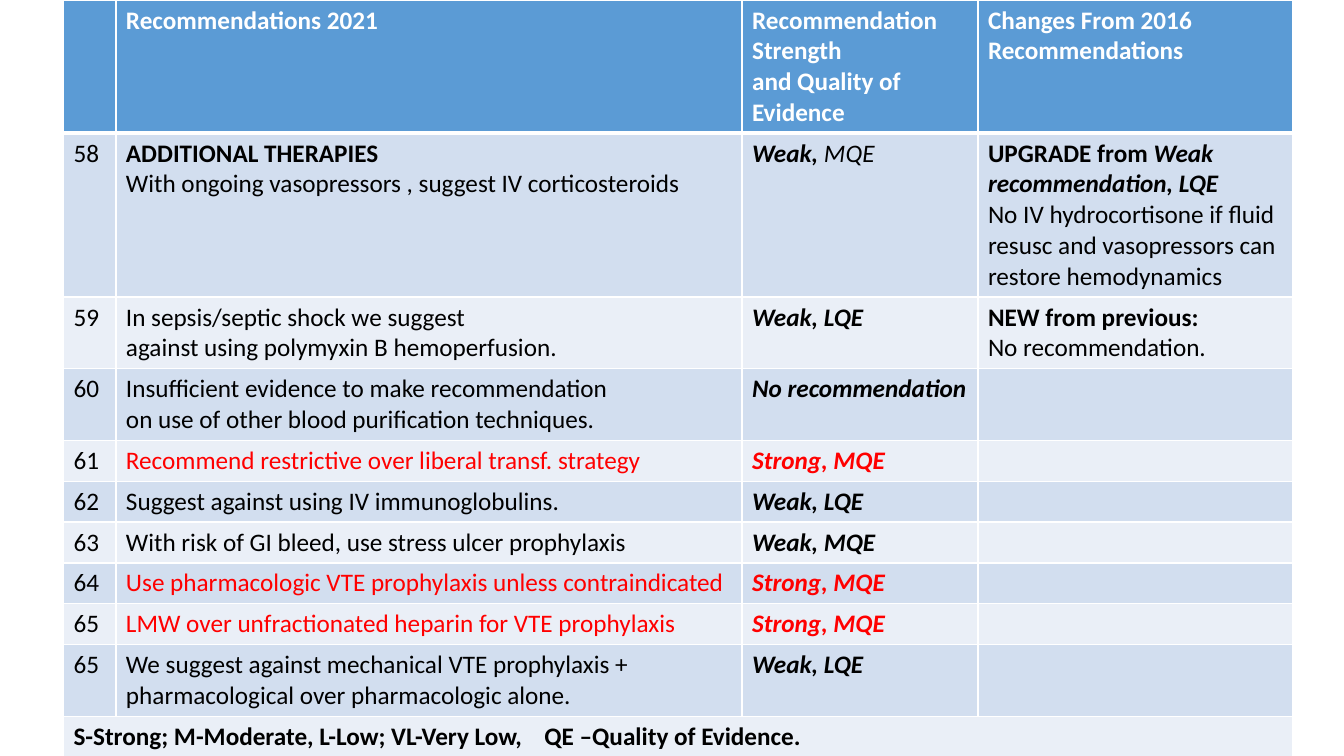
"""Build a slide with a table of sepsis recommendations 58 to 65."""
from lxml import etree
from pptx import Presentation
from pptx.dml.color import RGBColor
from pptx.oxml.ns import qn
from pptx.util import Inches, Pt

FONT = "Calibri"
SIZE = 18
LINE, PAD = 0.3, 0.1
LEFT = 0.63
COLS = [0.52, 6.21, 2.34, 3.12]
STOP = 4.67
COLOR = {"head": "5B9BD5", "odd": "D2DEEF", "even": "EAEFF7",
         "rule": "FFFFFF", "text": "000000", "alert": "FF0000"}

HEAD = ["", "*Recommendations 2021*",
        "*Recommendation Strength*\n*and Quality of Evidence*",
        "*Changes From 2016 Recommendations*"]
BODY = [
    ["58", "*ADDITIONAL THERAPIES*\n"
     "With ongoing vasopressors , suggest IV corticosteroids",
     "*_Weak, _*_MQE_",
     "*UPGRADE from _Weak_*\n*_recommendation, LQE_*\n"
     "No IV hydrocortisone if fluid\n"
     "resusc and vasopressors can restore hemodynamics"],
    ["59", "In sepsis/septic shock we suggest\n"
     "against using polymyxin B hemoperfusion.",
     "*_Weak, LQE_*", "*NEW from previous:*\nNo recommendation."],
    ["60", "Insufficient evidence to make recommendation\n"
     "on use of other blood purification techniques.",
     "*_No recommendation_*", ""],
    ["61", "Recommend restrictive over liberal transf. strategy",
     "*_Strong, MQE_*", ""],
    ["62", "Suggest against using IV immunoglobulins.", "*_Weak, LQE_*", ""],
    ["63", "With risk of GI bleed, use stress ulcer prophylaxis",
     "*_Weak, MQE_*", ""],
    ["64", "Use pharmacologic VTE prophylaxis unless contraindicated",
     "*_Strong, MQE_*", ""],
    ["65", "LMW over unfractionated heparin for VTE prophylaxis",
     "*_Strong, MQE_*", ""],
    ["65", "We suggest against mechanical VTE prophylaxis + "
     "pharmacological over pharmacologic alone.", "*_Weak, LQE_*", ""],
]
FOOT = ["*S-Strong; M-Moderate, L-Low; VL-Very Low,\tQE –Quality of Evidence.*",
        "", "", ""]
LINES = [4, 5, 2, 2, 1, 1, 1, 1, 1, 2, 1]


def add_runs(para, text, color):
    """Add runs, with * switching bold and _ switching italic."""
    for b, chunk in enumerate(text.split("*")):
        for i, part in enumerate(chunk.split("_")):
            if not part:
                continue
            run = para.add_run()
            run.text = part
            font = run.font
            font.name, font.size = FONT, Pt(SIZE)
            font.bold, font.italic = b % 2 == 1, i % 2 == 1
            font.color.rgb = RGBColor.from_string(COLOR[color])


def add_rules(cell, widths):
    """Draw the four cell borders at the given point widths."""
    props = cell._tc.get_or_add_tcPr()
    for side, width in zip("LRTB", widths):
        line = etree.SubElement(props, qn(f"a:ln{side}"), w=str(Pt(width)))
        fill = etree.SubElement(line, qn("a:solidFill"))
        etree.SubElement(fill, qn("a:srgbClr"), val=COLOR["rule"])


def add_stop(para, place):
    """Set one left tab stop, in inches from the text edge."""
    tabs = etree.SubElement(para._p.get_or_add_pPr(), qn("a:tabLst"))
    etree.SubElement(tabs, qn("a:tab"), pos=str(Inches(place)), algn="l")


def fill_cell(cell, text, fill, color, widths):
    """Give a cell its borders, fill and marked-up text."""
    add_rules(cell, widths)
    cell.fill.solid()
    cell.fill.fore_color.rgb = RGBColor.from_string(COLOR[fill])
    frame = cell.text_frame
    for n, line in enumerate(text.split("\n")):
        para = frame.add_paragraph() if n else frame.paragraphs[0]
        para.font.size = Pt(SIZE)
        add_runs(para, line, color)


def fill_row(table, r, texts):
    """Fill one row with the colours and rules of its place."""
    fill = "head" if r == 0 else "odd" if r % 2 else "even"
    strong = "Strong," in texts[2]
    widths = (1, 1, 3 if r == 1 else 1, 3 if r == 0 else 1)
    for c, text in enumerate(texts):
        color = "rule" if r == 0 else "alert" if strong and c else "text"
        fill_cell(table.cell(r, c), text, fill, color, widths)


def add_grid(slide, rows):
    """Add the table, sized by its columns and lines of text."""
    highs = [LINE * n + PAD for n in LINES]
    table = slide.shapes.add_table(
        len(rows), len(COLS), Inches(LEFT), 0,
        Inches(sum(COLS)), Inches(sum(highs))).table
    for col, width in zip(table.columns, COLS):
        col.width = Inches(width)
    for r, (texts, high) in enumerate(zip(rows, highs)):
        table.rows[r].height = Inches(high)
        fill_row(table, r, texts)
    last = len(rows) - 1
    foot = table.cell(last, 0)
    foot.merge(table.cell(last, len(COLS) - 1))
    add_stop(foot.text_frame.paragraphs[0], STOP)


def main():
    """Build and save the slide."""
    deck = Presentation()
    deck.slide_width, deck.slide_height = Inches(13.33), Inches(7.5)
    slide = deck.slides.add_slide(deck.slide_layouts[6])
    add_grid(slide, [HEAD, *BODY, FOOT])
    deck.save("out.pptx")


if __name__ == "__main__":
    main()
